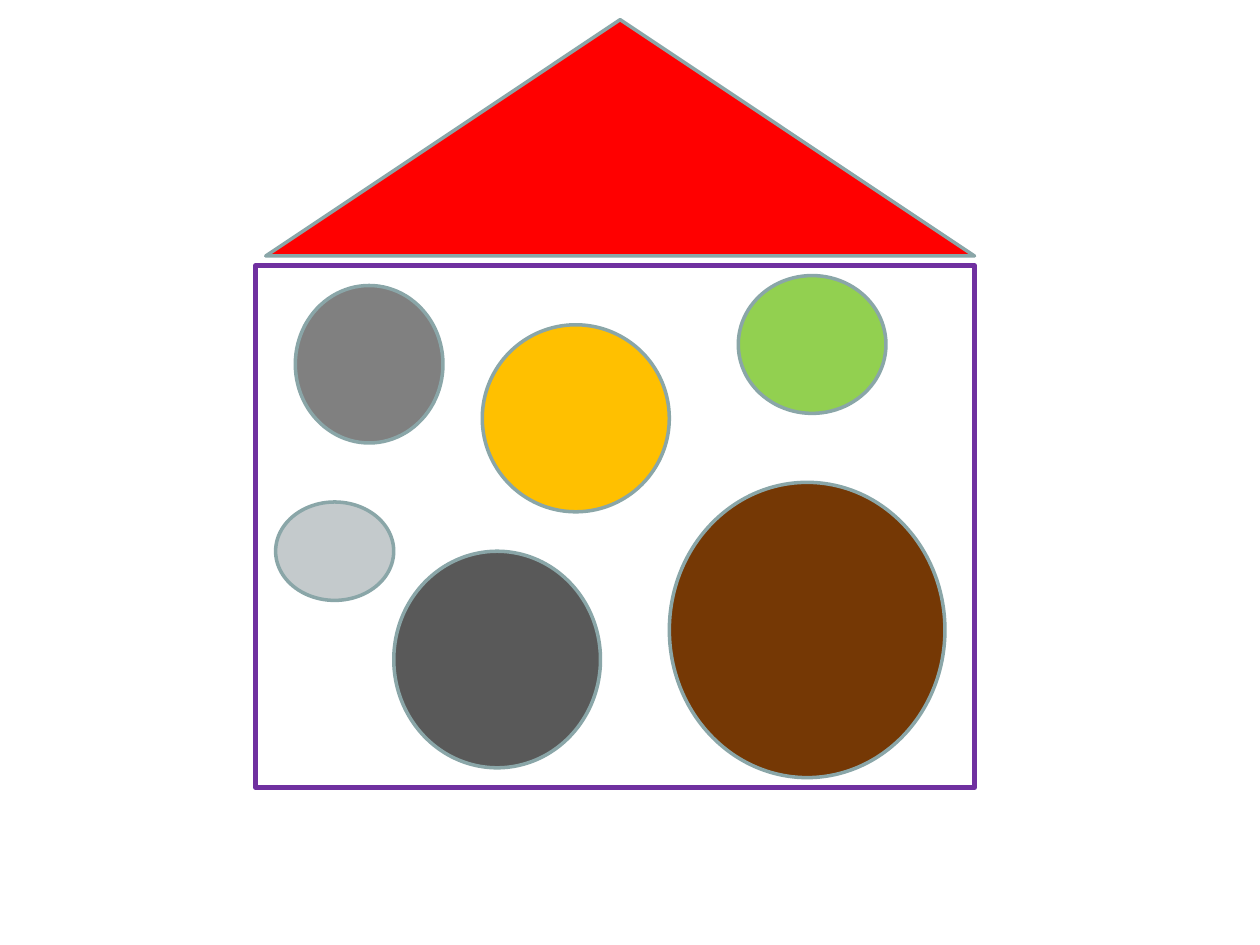
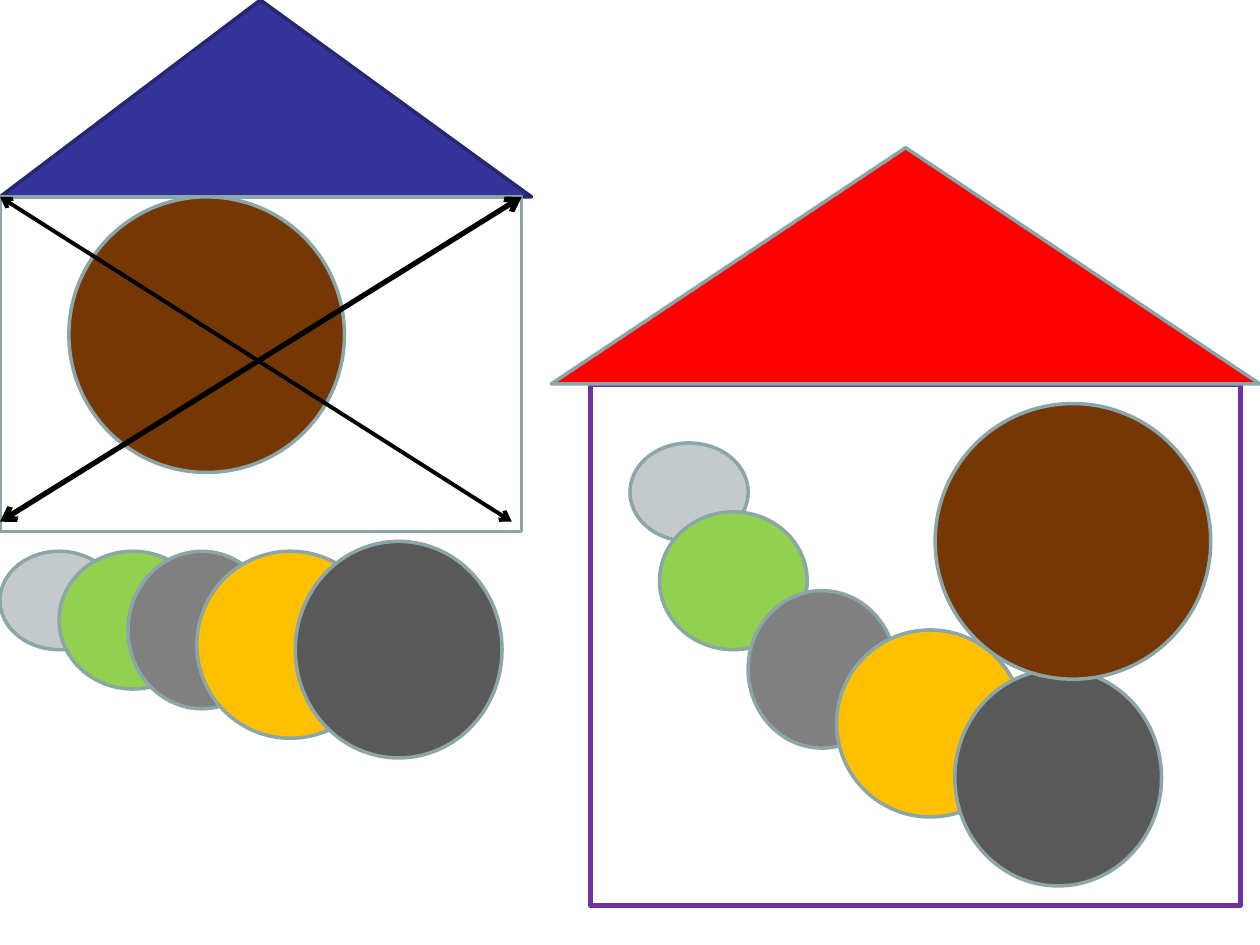
from dataclasses import dataclass

from lxml.etree import SubElement
from pptx import Presentation
from pptx.dml.color import RGBColor
from pptx.enum.shapes import MSO_CONNECTOR, MSO_SHAPE
from pptx.oxml.ns import qn
from pptx.shapes.autoshape import Shape
from pptx.slide import Slide
from pptx.util import Emu, Pt

RECT = MSO_SHAPE.RECTANGLE
ROOF = MSO_SHAPE.ISOSCELES_TRIANGLE
DISC = MSO_SHAPE.FLOWCHART_CONNECTOR
STRAIGHT = MSO_CONNECTOR.STRAIGHT

# Shared colours and scale (128 px to the inch)
SCALE = 914400 / 128
WIDE, HIGH = 1280, 960
EDGE, WALL = "8AA6A8", "7030A0"
RED, BLUE, NAVY = "FF0000", "333399", "262671"
WHITE, BLACK = "FFFFFF", "000000"
BLANK = 6


@dataclass(frozen=True)
class Look:
    fill: str | None
    line: str = EDGE
    width: float = 2
    alpha: int = 100


@dataclass(frozen=True)
class Disc:
    wide: int
    high: int
    look: Look


@dataclass(frozen=True)
class Arrow:
    start: tuple[int, int]
    end: tuple[int, int]
    width: float


# Discs, from small to large
DISCS = {
    "pale": Disc(120, 100, Look("69797D", alpha=39)),
    "green": Disc(150, 140, Look("92D050")),
    "grey": Disc(150, 160, Look("808080")),
    "gold": Disc(190, 190, Look("FFC000")),
    "dark": Disc(210, 220, Look("595959")),
    "brown": Disc(280, 280, Look("753805")),
}
FRAME = Look(WHITE, WALL, 3)

# Left and top of each disc, in the order of DISCS
LOOSE = [(280, 510), (750, 280), (300, 290), (490, 330), (400, 560), (680, 490)]
ROW = [(0, 560), (60, 560), (130, 560), (200, 560), (300, 550), (70, 200)]
STAIRS = [(640, 450), (670, 520), (760, 600), (850, 640), (970, 680), (950, 410)]

ARROWS = [
    Arrow((0, 200), (520, 530), 2.25),
    Arrow((0, 530), (530, 200), 3),
]


def px(size: int) -> Emu:
    return Emu(round(size * SCALE))


def tint(code: str) -> RGBColor:
    return RGBColor.from_string(code)


def stroke(line, code: str, width: float) -> None:
    line.color.rgb = tint(code)
    for name, value in {"width": Pt(width)}.items():
        setattr(line, name, value)


def draw(slide: Slide, kind, box: tuple[int, int, int, int], look: Look) -> Shape:
    shape = slide.shapes.add_shape(kind, *map(px, box))
    shape.shadow.inherit = False
    stroke(shape.line, look.line, look.width)
    if look.fill is None:
        shape.fill.background()
        return shape
    shape.fill.solid()
    shape.fill.fore_color.rgb = tint(look.fill)
    if look.alpha < 100:
        color = shape.element.spPr.find(qn("a:solidFill")).find(qn("a:srgbClr"))
        SubElement(color, qn("a:alpha"), val=str(look.alpha * 1000))
    return shape


def scatter(slide: Slide, spots: list[tuple[int, int]], tall: int = 280) -> None:
    """Draw all discs; tall is the height of the brown one."""
    for (name, disc), (left, top) in zip(DISCS.items(), spots):
        high = tall if name == "brown" else disc.high
        draw(slide, DISC, (left, top, disc.wide, high), disc.look)


def house(slide: Slide, wall: tuple[int, int, int, int], roof: tuple[int, int]) -> None:
    draw(slide, RECT, wall, FRAME)
    draw(slide, ROOF, (*roof, 720, 240), Look(RED))


def cross(slide: Slide, arrow: Arrow) -> None:
    ends = map(px, (*arrow.start, *arrow.end))
    link = slide.shapes.add_connector(STRAIGHT, *ends)
    stroke(link.line, BLACK, arrow.width)
    props = link.element.spPr
    for tag in ("a:headEnd", "a:tailEnd"):
        SubElement(props.find(qn("a:ln")), qn(tag), type="arrow")
    SubElement(props, qn("a:effectLst"))


def main() -> None:
    deck = Presentation()
    for name, size in {"slide_width": WIDE, "slide_height": HIGH}.items():
        setattr(deck, name, px(size))
    first, second = (deck.slides.add_slide(deck.slide_layouts[BLANK]) for _ in range(2))

    # One house with loose discs
    house(first, (260, 270, 730, 530), (270, 20))
    scatter(first, LOOSE, tall=300)

    # Crossed-out house, its discs in a row below
    roof = draw(second, ROOF, (0, 0, 540, 200), Look(BLUE, NAVY))
    roof.adjustments[0] = 0.49
    draw(second, RECT, (0, 200, 530, 340), Look(None))
    scatter(second, ROW)

    # Larger house with the discs as stairs
    house(second, (600, 390, 660, 530), (560, 150))
    scatter(second, STAIRS)

    # Diagonal arrows
    for arrow in ARROWS:
        cross(second, arrow)

    deck.save("out.pptx")


if __name__ == "__main__":
    main()
